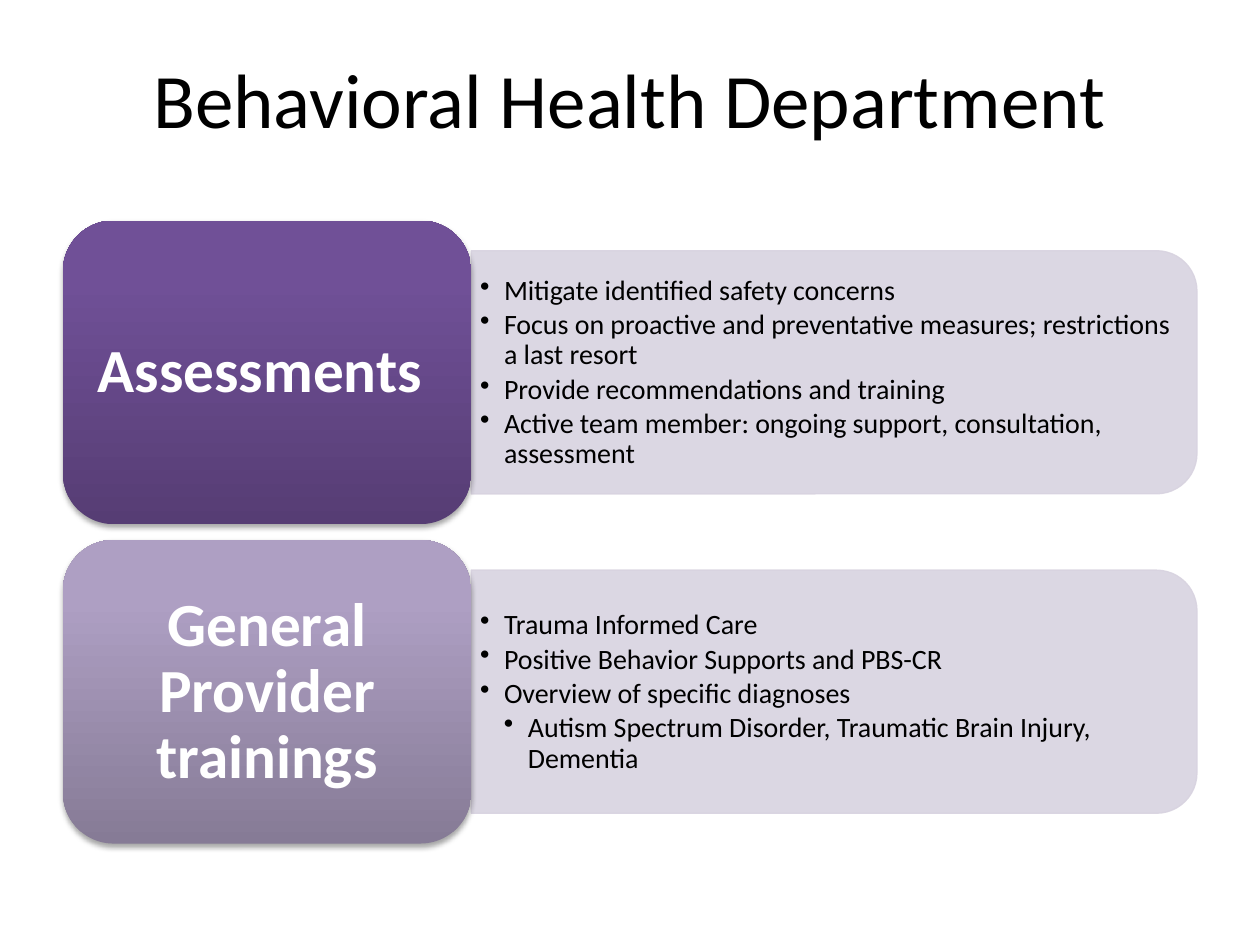
from lxml.etree import SubElement
from pptx import Presentation
from pptx.dml.color import RGBColor
from pptx.enum.shapes import MSO_SHAPE
from pptx.enum.text import MSO_ANCHOR, PP_ALIGN
from pptx.oxml.ns import qn
from pptx.util import Inches, Pt

COLORS = {
    "text": "000000",
    "label": "FFFFFF",
    "panel": "D8D3E0",
    "shadow": "000000",
}

# Label, gradient stops from bottom to top, bullets as (level, text)
SECTIONS = [
    ("Assessments ",
     [(0, "563D74"), (80, "705097"), (100, "704F99")],
     [(1, "Mitigate identified safety concerns"),
      (1, "Focus on proactive and preventative measures; restrictions a last resort"),
      (1, "Provide recommendations and training"),
      (1, "Active team member: ongoing support, consultation, assessment")]),
    ("General Provider trainings",
     [(0, "867B96"), (80, "AE9FC3"), (100, "AE9FC4")],
     [(1, "Trauma Informed Care"),
      (1, "Positive Behavior Supports and PBS-CR"),
      (1, "Overview of specific diagnoses"),
      (2, "Autism Spectrum Disorder, Traumatic Brain Injury, Dementia")]),
]
FIRST_TOP, PITCH = 1.75, 2.535
INDENT = 0.19


class SlideBuilder:
    font = "Calibri"

    def __init__(self, slide):
        self.slide = slide

    def add_color(self, parent, color, alpha):
        clr = SubElement(parent, qn("a:srgbClr"), val=color)
        SubElement(clr, qn("a:alpha"), val=str(alpha * 1000))

    def add_shadow(self, effects, blur, distance, angle, alpha):
        shadow = SubElement(effects, qn("a:outerShdw"), blurRad=str(Pt(blur)),
                            dist=str(Pt(distance)), dir=str(angle * 60000),
                            algn="tl", rotWithShape="0")
        self.add_color(shadow, COLORS["shadow"], alpha)

    def format_runs(self, paragraph, size, color, bold=False):
        for run in paragraph.runs:
            run.font.name = self.font
            run.font.size = Pt(size)
            run.font.bold = bold
            run.font.color.rgb = RGBColor.from_string(color)

    def text_box(self, left, top, width, height, lines, margins):
        box = self.slide.shapes.add_textbox(
            Inches(left), Inches(top), Inches(width), Inches(height))
        frame = box.text_frame
        frame.word_wrap = True
        frame.vertical_anchor = MSO_ANCHOR.MIDDLE
        frame.margin_left = frame.margin_right = Inches(margins[0])
        frame.margin_top = frame.margin_bottom = Inches(margins[1])
        frame.text = "\n".join(lines)
        return frame.paragraphs

    def title(self, text):
        heading, = self.text_box(0.5, 0.3, 9, 0.95, [text], (0.1, 0.05))
        heading.alignment = PP_ALIGN.CENTER
        self.format_runs(heading, 44, COLORS["text"])
        # The text shadow follows the fill in the run properties
        properties = heading.runs[0]._r.get_or_add_rPr()
        effects = SubElement(properties, qn("a:effectLst"))
        properties.find(qn("a:solidFill")).addnext(effects)
        self.add_shadow(effects, 3, 3, 45, 43)

    def panel(self, left, top, width, height):
        # Turned a quarter so that the rounded corners face right
        panel = self.slide.shapes.add_shape(
            MSO_SHAPE.ROUND_2_SAME_RECTANGLE,
            Inches(left + (width - height) / 2), Inches(top + (height - width) / 2),
            Inches(height), Inches(width))
        panel.rotation = 90
        panel.shadow.inherit = False
        panel.line.width = Pt(0.75)
        for fill in (panel.fill, panel.line.fill):
            fill.solid()
            fill.fore_color.rgb = RGBColor.from_string(COLORS["panel"])
        for clr in panel._element.spPr.iter(qn("a:srgbClr")):
            SubElement(clr, qn("a:alpha"), val="90000")

    def bullets(self, left, top, width, height, items):
        paragraphs = self.text_box(left, top, width, height,
                                   [text for _, text in items], (0.07, 0.03))
        for paragraph, (level, _) in zip(paragraphs, items):
            paragraph.level = level
            paragraph.alignment = PP_ALIGN.LEFT
            paragraph.line_spacing = 0.9
            paragraph.space_after = Pt(2.4)
            properties = paragraph._p.get_or_add_pPr()
            properties.set("marL", str(Inches(INDENT * level)))
            properties.set("indent", str(-Inches(INDENT)))
            SubElement(properties, qn("a:buChar"), char="•")
            self.format_runs(paragraph, 16, COLORS["text"])

    def label_block(self, left, top, width, height, stops):
        block = self.slide.shapes.add_shape(
            MSO_SHAPE.ROUNDED_RECTANGLE,
            Inches(left), Inches(top), Inches(width), Inches(height))
        block.line.fill.background()
        block.fill.gradient()
        block.fill.gradient_angle = 90
        properties = block._element.spPr
        stop_list = properties.find(".//" + qn("a:gsLst"))
        for old_stop in list(stop_list):
            stop_list.remove(old_stop)
        for position, color in stops:
            stop = SubElement(stop_list, qn("a:gs"), pos=str(position * 1000))
            SubElement(stop, qn("a:srgbClr"), val=color)
        block.shadow.inherit = False
        self.add_shadow(properties.find(qn("a:effectLst")), 3.1, 1.8, 90, 35)

    def label(self, left, top, width, height, text):
        label, = self.text_box(left, top, width, height, [text], (0.15, 0.07))
        label.alignment = PP_ALIGN.CENTER
        label.line_spacing = 0.9
        label.space_after = Pt(12.25)
        self.format_runs(label, 35, COLORS["label"], bold=True)


def main():
    deck = Presentation()
    deck.slide_width, deck.slide_height = Inches(10), Inches(7.5)
    builder = SlideBuilder(deck.slides.add_slide(deck.slide_layouts[6]))

    builder.title("Behavioral Health Department")

    # One row per section: panel with bullets, then the label on the left
    for row, (name, stops, items) in enumerate(SECTIONS):
        top = FIRST_TOP + row * PITCH
        builder.panel(3.74, top + 0.24, 5.76, 1.93)
        builder.bullets(3.74, top + 0.34, 5.67, 1.74, items)
        builder.label_block(0.5, top, 3.24, 2.41, stops)
        builder.label(0.62, top + 0.12, 3, 2.18, name)

    deck.save("out.pptx")


if __name__ == "__main__":
    main()
